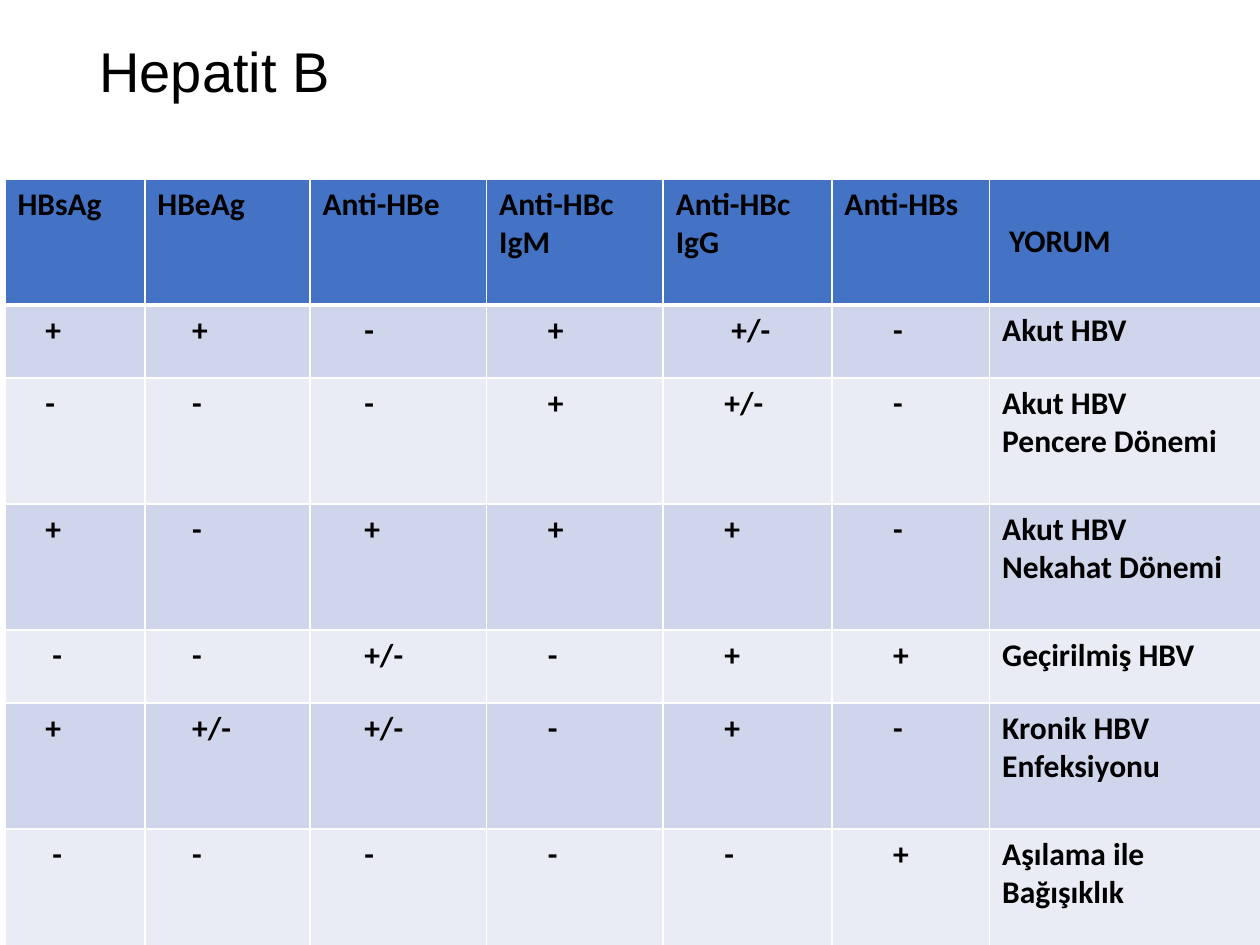
from lxml.etree import SubElement
from pptx import Presentation
from pptx.dml.color import RGBColor
from pptx.enum.text import MSO_ANCHOR as Anchor, MSO_AUTO_SIZE as AutoSize, PP_ALIGN as Align
from pptx.oxml.ns import qn
from pptx.util import Cm, Pt

COLORS = {"text": "000000", "header": "4472C4", "band_dark": "CFD5EA",
          "band_light": "E9EBF5", "border": "FFFFFF"}
COLUMN_WIDTHS = [2.82, 3.33, 3.56, 3.56, 3.4, 3.18, 5.51]
TALL, SHORT = 2.54, 1.47
ROW_HEIGHTS = [TALL, SHORT, TALL, TALL, SHORT, TALL, TALL]
INDENT_STEP = 0.14
COLUMN_STEPS = [4, 5, 6, 7, 7, 7, 0]
SHIFTED_CELLS = {(0, 6), (1, 4), (4, 0), (6, 0)}
SEROLOGY = [
    ["HBsAg", "HBeAg", "Anti-HBe", "Anti-HBc IgM", "Anti-HBc IgG", "Anti-HBs", "YORUM"],
    ["+", "+", "-", "+", "+/-", "-", "Akut HBV"],
    ["-", "-", "-", "+", "+/-", "-", "Akut HBV\nPencere Dönemi"],
    ["+", "-", "+", "+", "+", "-", "Akut HBV\nNekahat Dönemi"],
    ["-", "-", "+/-", "-", "+", "+", "Geçirilmiş HBV"],
    ["+", "+/-", "+/-", "-", "+", "-", "Kronik HBV Enfeksiyonu"],
    ["-", "-", "-", "-", "-", "+", "Aşılama ile Bağışıklık"],
]


def add_span(para, text, font, size, bold=False):
    """Add one formatted run to a paragraph."""
    span = para.add_run()
    span.text = text
    span.font.name = font
    span.font.size = Pt(size)
    span.font.bold = bold
    span.font.color.rgb = RGBColor.from_string(COLORS["text"])


def format_title(title, text):
    """Place the title placeholder and write its text."""
    title.left, title.top, title.width, title.height = Cm(1.75), Cm(-0.2), Cm(21.9), Cm(3.38)
    frame = title.text_frame
    frame.auto_size = AutoSize.NONE
    frame.vertical_anchor = Anchor.MIDDLE
    para = frame.paragraphs[0]
    para.alignment = Align.LEFT
    para.line_spacing = 0.9
    add_span(para, text, "Arial", 32)


def set_borders(cell, top, bottom):
    """Draw the four cell borders, with top and bottom widths in points."""
    properties = cell._tc.get_or_add_tcPr()
    for side, width in (("L", 1), ("R", 1), ("T", top), ("B", bottom)):
        line = SubElement(properties, qn(f"a:ln{side}"), w=str(Pt(width)))
        fill = SubElement(line, qn("a:solidFill"))
        SubElement(fill, qn("a:srgbClr"), val=COLORS["border"])


def fill_cell(cell, row, column, text):
    """Write one table cell and set its borders, fill and indent."""
    set_borders(cell, top=3 if row == 1 else 1, bottom=3 if row == 0 else 1)
    band = "header" if row == 0 else "band_dark" if row % 2 else "band_light"
    cell.fill.solid()
    cell.fill.fore_color.rgb = RGBColor.from_string(COLORS[band])
    cell.vertical_anchor = Anchor.MIDDLE if (row, column) == (0, 6) else Anchor.TOP
    steps = (COLUMN_STEPS[column] if row else 0) + ((row, column) in SHIFTED_CELLS)
    for number, line in enumerate(text.split("\n")):
        frame = cell.text_frame
        para = frame.add_paragraph() if number else frame.paragraphs[0]
        para._p.get_or_add_pPr().set("marL", str(Cm(steps * INDENT_STEP)))
        add_span(para, line, "Calibri", 18, bold=True)


def add_serology_table(slide):
    """Add the table of markers and their interpretation."""
    table = slide.shapes.add_table(
        len(ROW_HEIGHTS), len(COLUMN_WIDTHS), Cm(0.1), Cm(3.61),
        Cm(sum(COLUMN_WIDTHS)), Cm(sum(ROW_HEIGHTS))).table
    for column, width in zip(table.columns, COLUMN_WIDTHS):
        column.width = Cm(width)
    for row, height in zip(table.rows, ROW_HEIGHTS):
        row.height = Cm(height)
    for row, texts in enumerate(SEROLOGY):
        for column, text in enumerate(texts):
            fill_cell(table.cell(row, column), row, column, text)


def main():
    """Build and save the deck."""
    deck = Presentation()
    deck.slide_width, deck.slide_height = Cm(25.4), Cm(19.05)
    slide = deck.slides.add_slide(deck.slide_layouts[5])
    format_title(slide.shapes.title, "Hepatit B")
    add_serology_table(slide)
    deck.save("out.pptx")


if __name__ == "__main__":
    main()
